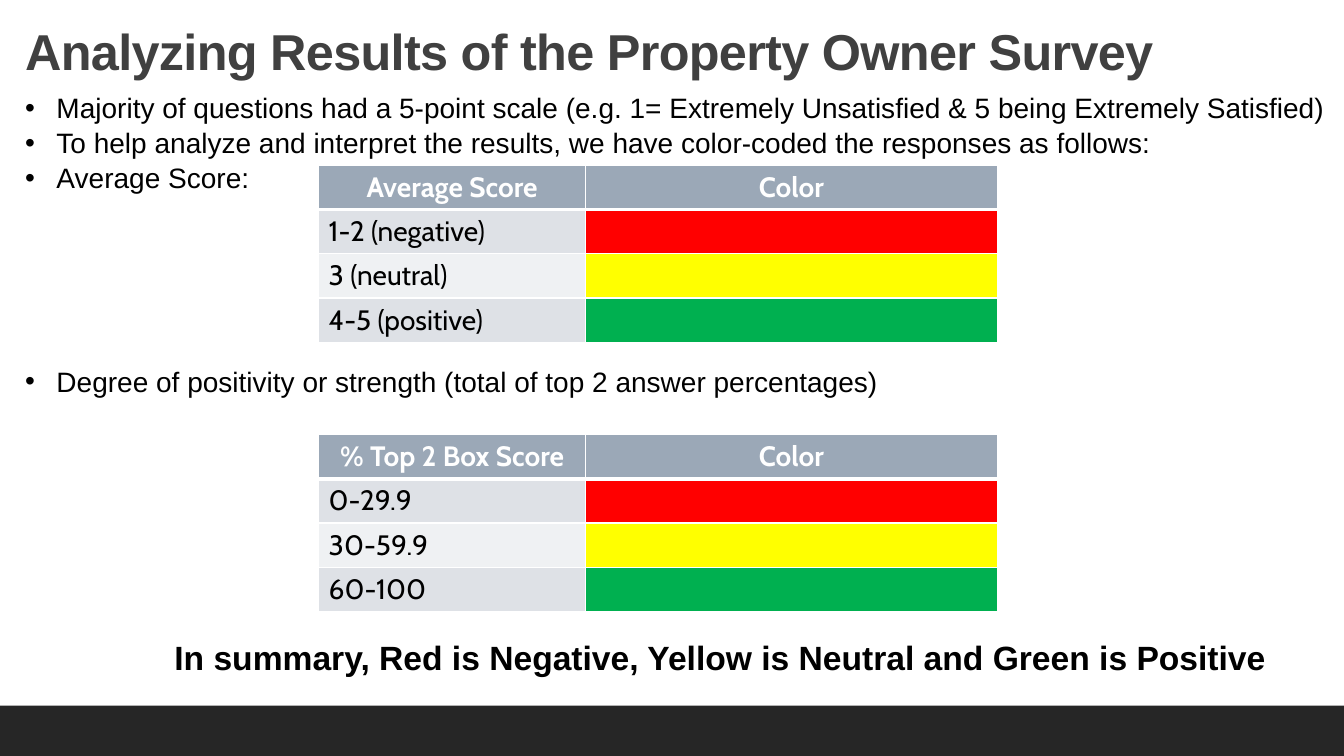
import pptx
import pptx.util
import pptx.dml.color
import pptx.enum.shapes
import pptx.enum.text
import pptx.oxml
import pptx.oxml.ns
from lxml import etree

Inches, Pt = pptx.util.Inches, pptx.util.Pt
RGBColor = pptx.dml.color.RGBColor
PP_ALIGN = pptx.enum.text.PP_ALIGN
qn = pptx.oxml.ns.qn

BLACK = RGBColor(0x00, 0x00, 0x00)
WHITE = RGBColor(0xFF, 0xFF, 0xFF)
TITLE_GRAY = RGBColor(0x40, 0x40, 0x40)
FOOTER_GRAY = RGBColor(0x26, 0x26, 0x26)
HEADER_BLUE = RGBColor(0x9B, 0xA8, 0xB7)
BAND_DARK = RGBColor(0xDE, 0xE1, 0xE6)
BAND_LIGHT = RGBColor(0xEF, 0xF1, 0xF3)
RED = RGBColor(0xFF, 0x00, 0x00)
YELLOW = RGBColor(0xFF, 0xFF, 0x00)
GREEN = RGBColor(0x00, 0xB0, 0x50)


def add_text(p, text, size=20, font="Arial", color=BLACK, bold=False,
             align=PP_ALIGN.LEFT, before=0, line=1.0, spacing=None):
    """Write one formatted run into a paragraph."""
    p.alignment = align
    p.space_before, p.space_after = Pt(before), Pt(0)
    p.line_spacing = line
    r = p.add_run()
    r.text = text
    r.font.size, r.font.name, r.font.bold = Pt(size), font, bold
    r.font.color.rgb = color
    if spacing is not None:
        r.font._element.set("spc", str(int(spacing * 100)))


def set_indent(p, left, first=0.0, bullet=None):
    pPr = p._p.get_or_add_pPr()
    pPr.set("marL", str(Inches(left)))
    pPr.set("indent", str(Inches(first)))
    if bullet:
        etree.SubElement(pPr, qn("a:buFont")).set("typeface", "Arial")
        etree.SubElement(pPr, qn("a:buChar")).set("char", bullet)
    else:
        etree.SubElement(pPr, qn("a:buNone"))


def set_borders(cell, bottom=1):
    tcPr = cell._tc.get_or_add_tcPr()
    for side, width in (("L", 1), ("R", 1), ("T", 1), ("B", bottom)):
        ln = etree.SubElement(tcPr, qn(f"a:ln{side}"), w=str(Pt(width)))
        fill = etree.SubElement(ln, qn("a:solidFill"))
        etree.SubElement(fill, qn("a:srgbClr"), val=str(WHITE))


class SurveySlide:
    cell_font = "Cabin"

    def __init__(self, prs):
        self.s = prs.slides.add_slide(prs.slide_layouts[1])

    def place(self, sp, left, top, width, height):
        sp.left, sp.top = Inches(left), Inches(top)
        sp.width, sp.height = Inches(width), Inches(height)
        tf = sp.text_frame
        tf.word_wrap = True
        tf.auto_size = pptx.enum.text.MSO_AUTO_SIZE.NONE
        tf.vertical_anchor = pptx.enum.text.MSO_ANCHOR.TOP
        return tf

    def bar(self, left, top, width, height, color):
        sp = self.s.shapes.add_shape(
            pptx.enum.shapes.MSO_SHAPE.RECTANGLE,
            Inches(left), Inches(top), Inches(width), Inches(height))
        sp.shadow.inherit = False
        sp.fill.solid()
        sp.fill.fore_color.rgb = color
        sp.line.fill.background()

    def title(self, text):
        tf = self.place(self.s.shapes.title, 0.15, 0.18, 11.83, 0.81)
        tf.margin_top = Inches(0.09)
        add_text(tf.paragraphs[0], text, size=36, color=TITLE_GRAY,
                 bold=True, line=0.9, spacing=-0.5)

    def body(self, bullets, summary):
        tf = self.place(self.s.placeholders[1], 0.15, 0.85, 13.18, 6.1)
        tf.margin_right = 0
        p = tf.paragraphs[0]
        for text, before in bullets:
            add_text(p, text, before=before)
            set_indent(p, 0.31, -0.31, "•")
            p = tf.add_paragraph()
        add_text(p, summary, size=24, bold=True, before=170.5)
        set_indent(p, 1.48)

    def score_table(self, top, heading, scores):
        row_height = 0.4325
        table = self.s.shapes.add_table(
            len(scores) + 1, 2, Inches(3.16), Inches(top),
            Inches(6.73), Inches(row_height * (len(scores) + 1))).table
        table.horz_banding = False
        for column, width in zip(table.columns, (2.65, 4.08)):
            column.width = Inches(width)
        for row in table.rows:
            row.height = Inches(row_height)

        # Header row
        for col, text in enumerate((heading, "Color")):
            self.cell(table.cell(0, col), HEADER_BLUE, text, bottom=3,
                      color=WHITE, bold=True, align=PP_ALIGN.CENTER)

        # Score rows with their colour code
        bands = (BAND_DARK, BAND_LIGHT, BAND_DARK)
        codes = (RED, YELLOW, GREEN)
        for row, (text, band, code) in enumerate(zip(scores, bands, codes), 1):
            self.cell(table.cell(row, 0), band, text)
            self.cell(table.cell(row, 1), code)

    def cell(self, cell, fill, text=None, bottom=1, **style):
        set_borders(cell, bottom)
        cell.fill.solid()
        cell.fill.fore_color.rgb = fill
        if text:
            add_text(cell.text_frame.paragraphs[0], text,
                     font=self.cell_font, **style)


def main():
    prs = pptx.Presentation()
    prs.slide_width, prs.slide_height = Inches(13.33), Inches(7.5)
    slide = SurveySlide(prs)

    # Footer band and text
    slide.bar(0, 7, 13.33, 0.5, FOOTER_GRAY)
    slide.title("Analyzing Results of the Property Owner Survey")
    slide.body(
        [("Majority of questions had a 5-point scale (e.g. 1= Extremely "
          "Unsatisfied & 5 being Extremely Satisfied)", 0),
         ("To help analyze and interpret the results, we have color-coded "
          "the responses as follows:", 1),
         ("Average Score:", 1),
         ("Degree of positivity or strength (total of top 2 answer "
          "percentages)", 121.3)],
        "In summary, Red is Negative, Yellow is Neutral and Green is Positive")

    # Colour keys
    slide.score_table(1.64, "Average Score",
                      ("1-2 (negative)", "3 (neutral)", "4-5 (positive)"))
    slide.score_table(4.31, "% Top 2 Box Score",
                      ("0-29.9", "30-59.9", "60-100"))

    prs.save("out.pptx")


if __name__ == "__main__":
    main()
